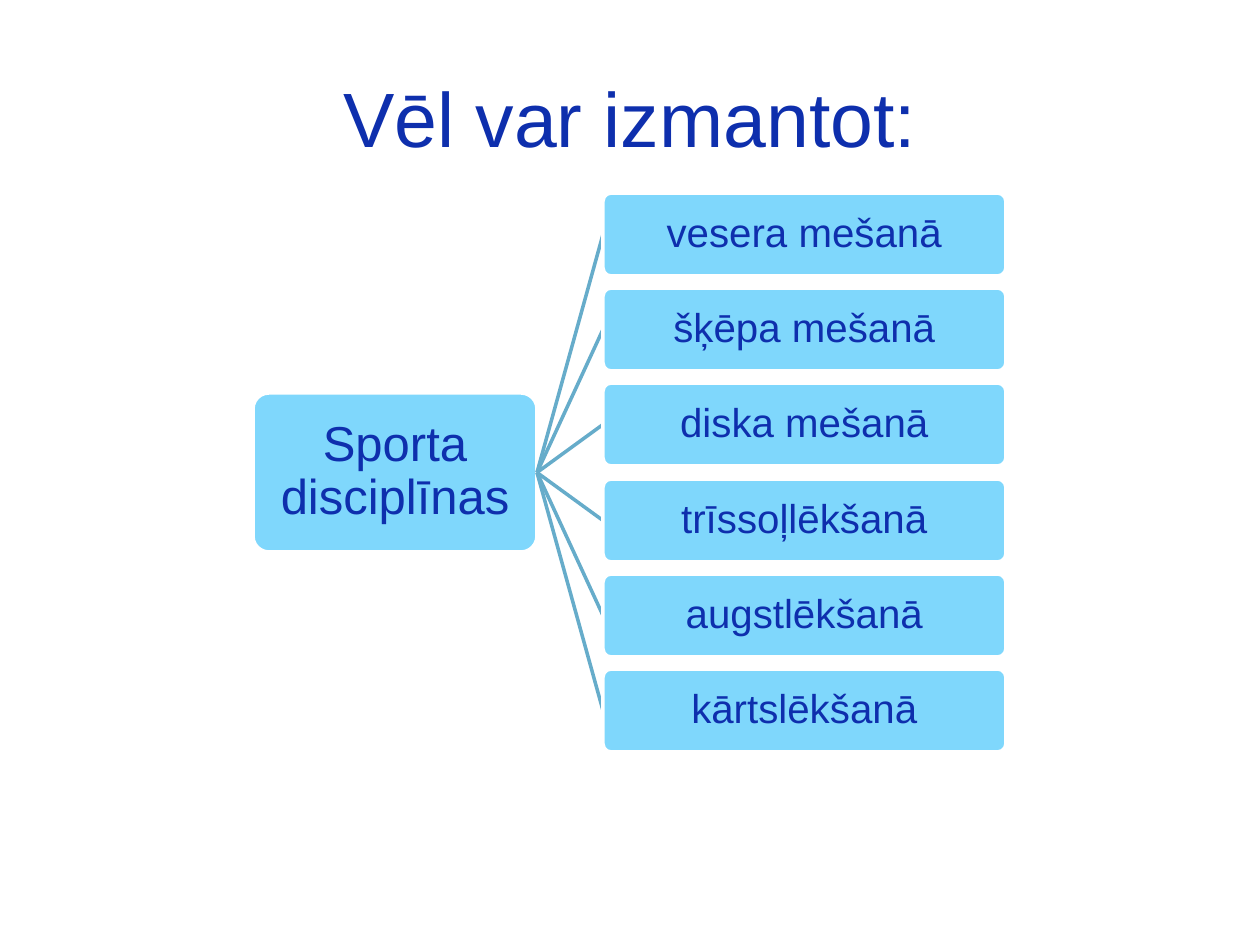
from dataclasses import dataclass

from lxml.etree import SubElement
from pptx import Presentation
from pptx.dml.color import RGBColor
from pptx.enum.shapes import MSO_CONNECTOR, MSO_SHAPE
from pptx.enum.text import MSO_ANCHOR, PP_ALIGN
from pptx.oxml.ns import qn
from pptx.shapes.autoshape import Shape
from pptx.slide import Slide
from pptx.text.text import _Paragraph
from pptx.util import Emu, Pt

PX_PER_INCH = 126
COLORS = {"text": "0E2FAD", "box": "7FD7FC", "outline": "FFFFFF", "link": "66ACCA"}
DISCIPLINES = [
    "vesera mešanā",
    "šķēpa mešanā",
    "diska mešanā",
    "trīssoļlēkšanā",
    "augstlēkšanā",
    "kārtslēkšanā",
]
LEFT, FIRST_TOP, WIDTH, HEIGHT, LAST_TOP = 603, 193, 403, 83, 669


@dataclass
class Node:
    text: str
    left: int
    top: int
    width: int
    height: int
    size: int


def px(n: int) -> Emu:
    return Emu(round(n * 914400 / PX_PER_INCH))


def color(name: str) -> RGBColor:
    return RGBColor.from_string(COLORS[name])


def set_attrs(obj: object, values: dict) -> None:
    for name, value in values.items():
        setattr(obj, name, value)


def write(p: _Paragraph, text: str, size: int) -> None:
    p.alignment = PP_ALIGN.CENTER
    r = p.add_run()
    r.text = text
    set_attrs(r.font, {"name": "Arial", "size": Pt(size)})
    r.font.color.rgb = color("text")


def add_node(s: Slide, node: Node) -> Shape:
    sp = s.shapes.add_shape(
        MSO_SHAPE.ROUNDED_RECTANGLE,
        px(node.left), px(node.top), px(node.width), px(node.height),
    )
    sp.adjustments[0] = 0.1
    sp.shadow.inherit = False
    sp.fill.solid()
    sp.fill.fore_color.rgb = color("box")
    sp.line.color.rgb = color("outline")
    sp.line.width = Pt(2)
    tf = sp.text_frame
    margins = {f"margin_{side}": px(3) for side in ("left", "top", "right", "bottom")}
    set_attrs(tf, {"word_wrap": True, "vertical_anchor": MSO_ANCHOR.MIDDLE, **margins})
    p = tf.paragraphs[0]
    p.line_spacing = 0.9
    write(p, node.text, node.size)
    return sp


def add_branch(s: Slide, root: Shape, node: Node) -> None:
    link = s.shapes.add_connector(MSO_CONNECTOR.STRAIGHT, 0, 0, 0, 0)
    link.line.color.rgb = color("link")
    link.line.width = Pt(2)
    SubElement(link._element.spPr, qn("a:effectLst"))
    sp = add_node(s, node)
    link.begin_connect(root, 3)
    link.end_connect(sp, 1)


def main() -> None:
    prs = Presentation()
    set_attrs(prs, {"slide_width": px(1260), "slide_height": px(945)})
    s = prs.slides.add_slide(prs.slide_layouts[5])
    title = s.shapes.title
    set_attrs(title, {"left": px(63), "top": px(38), "width": px(1134), "height": px(157)})
    title.text_frame.vertical_anchor = MSO_ANCHOR.MIDDLE
    write(title.text_frame.paragraphs[0], "Vēl var izmantot:", 44)

    root = add_node(s, Node("Sporta disciplīnas", 253, 393, 284, 159, 28))
    pitch = (LAST_TOP - FIRST_TOP) / (len(DISCIPLINES) - 1)
    for i, text in enumerate(DISCIPLINES):
        top = FIRST_TOP + round(i * pitch)
        add_branch(s, root, Node(text, LEFT, top, WIDTH, HEIGHT, 23))
    prs.save("out.pptx")


if __name__ == "__main__":
    main()
